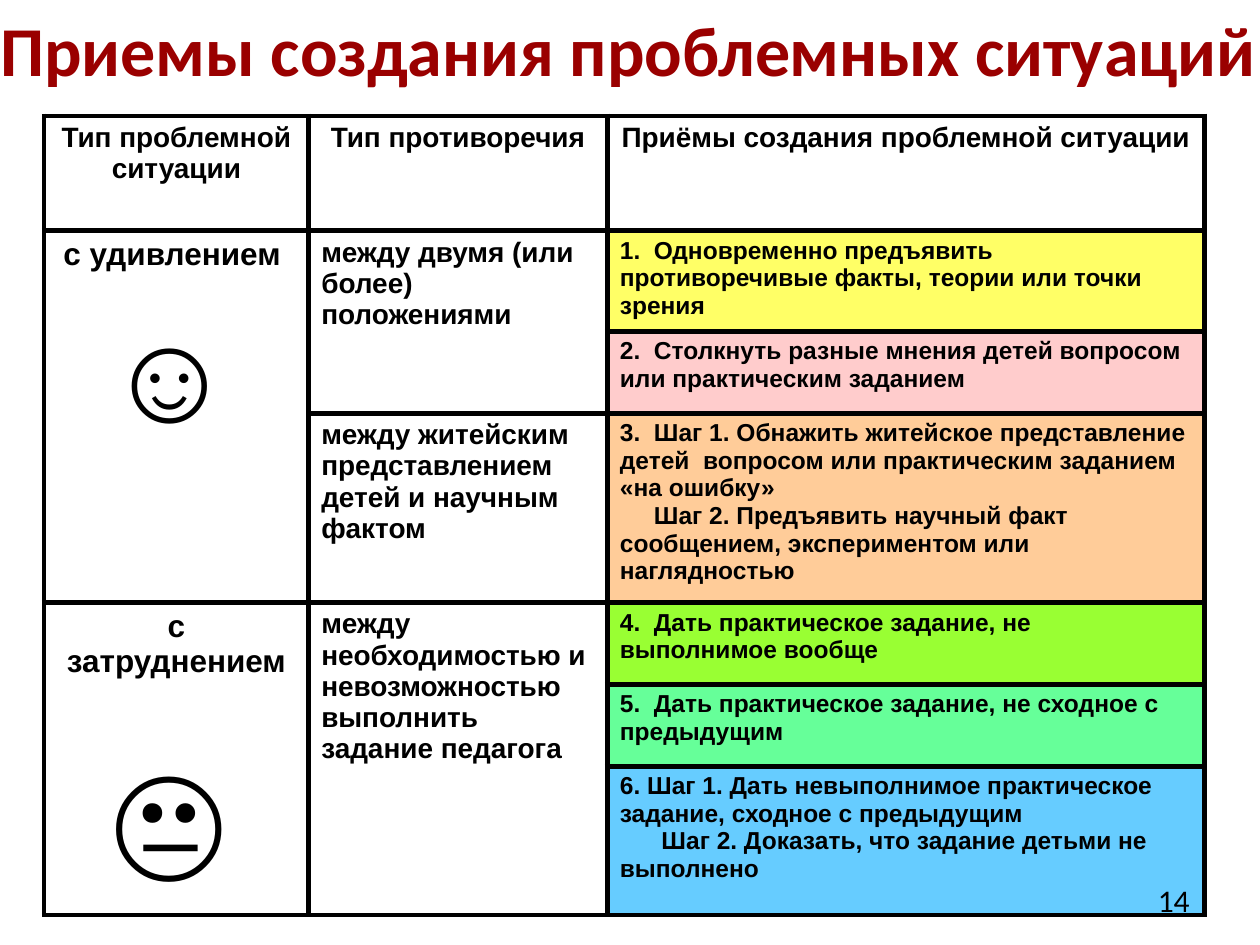
from dataclasses import dataclass

from lxml import etree
from pptx import Presentation
from pptx.dml.color import RGBColor
from pptx.enum import text
from pptx.oxml.ns import qn
from pptx.util import Emu, Inches, Pt

WIDTH, HEIGHT = Inches(10), Inches(7.5)
COLUMNS = (21, 23.7, 47.4)
ROWS = (12.13, 8.8, 8.67, 19.2, 8.67, 8.67, 15.73)
BLACK, DARK_RED = "000000", "9A0000"
CENTER, LEFT = text.PP_ALIGN.CENTER, text.PP_ALIGN.LEFT


@dataclass(frozen=True)
class Run:
    words: str
    size: float
    font: str = "Arial"
    color: str = BLACK
    bold: bool = True


@dataclass(frozen=True)
class Line:
    runs: tuple[Run, ...]
    align: text.PP_ALIGN = LEFT
    before: float = 0
    indent: float = 0


@dataclass(frozen=True)
class Entry:
    row: int
    column: int
    lines: tuple[Line, ...]
    row_span: int = 1
    fill: str | None = None


def header(column: int, words: str) -> Entry:
    """Describe a heading cell."""
    return Entry(0, column, (Line((Run(words, 16),), CENTER),))


def situation(row: int, words: str, face: str, gap: float) -> Entry:
    """Describe a situation type with its face symbol."""
    symbol = Line((Run(face, 72), Run(" ", 28, bold=False)), CENTER, gap)
    return Entry(row, 0, (Line((Run(words, 18),), CENTER), symbol), 3)


def contradiction(row: int, row_span: int, words: str) -> Entry:
    """Describe a contradiction cell."""
    return Entry(row, 1, (Line((Run(words, 16),)),), row_span)


def technique(row: int, fill: str, words: str, second: str = "", indent: float = 0) -> Entry:
    """Describe a coloured technique with an optional second step."""
    lines = [Line((Run(words, 14),))]
    if second:
        lines.append(Line((Run(second, 14),), indent=indent))
    return Entry(row, 2, tuple(lines), fill=fill)


ENTRIES = (
    header(0, "Тип проблемной ситуации"),
    header(1, "Тип противоречия"),
    header(2, "Приёмы создания проблемной ситуации"),
    situation(1, "с удивлением ", "☺", 21),
    situation(4, "с затруднением", "😐", 41),
    contradiction(1, 2, "между двумя (или более) положениями"),
    contradiction(3, 1, "между житейским представлением детей и научным фактом"),
    contradiction(4, 3, "между необходимостью и невозможностью выполнить задание педагога"),
    technique(1, "FFFF66", "1.  Одновременно предъявить противоречивые факты, теории или точки зрения"),
    technique(2, "FFCCCC", "2.  Столкнуть разные мнения детей вопросом или практическим заданием"),
    technique(3, "FFCC99", "3.  Шаг 1. Обнажить житейское представление детей  вопросом "
              "или практическим заданием «на ошибку»",
              "Шаг 2. Предъявить научный факт сообщением, экспериментом или наглядностью", 0.27),
    technique(4, "99FF33", "4.  Дать практическое задание, не выполнимое вообще"),
    technique(5, "66FF99", "5.  Дать практическое задание, не сходное с предыдущим"),
    technique(6, "66CCFF", "6. Шаг 1. Дать невыполнимое практическое задание, сходное с предыдущим",
              "Шаг 2. Доказать, что задание детьми не выполнено", 0.33),
)


def rgb(value: str) -> RGBColor:
    """Turn a hex string into a colour."""
    return RGBColor.from_string(value)


def across(percent: float) -> Emu:
    """Return a share of the slide's width."""
    return Emu(round(WIDTH * percent / 100))


def down(percent: float) -> Emu:
    """Return a share of the slide's height."""
    return Emu(round(HEIGHT * percent / 100))


def write(frame, lines: tuple[Line, ...]) -> None:
    """Fill a text frame run by run."""
    for index, line in enumerate(lines):
        paragraph = frame.add_paragraph() if index else frame.paragraphs[0]
        paragraph.alignment = line.align
        if line.before:
            paragraph.space_before = Pt(line.before)
        if line.indent:
            properties = paragraph._p.get_or_add_pPr()
            properties.set("marL", "0")
            properties.set("indent", str(Inches(line.indent)))
        for item in line.runs:
            run = paragraph.add_run()
            run.text = item.words
            run.font.size = Pt(item.size)
            run.font.name = item.font
            run.font.bold = item.bold
            run.font.color.rgb = rgb(item.color)


def add_label(slide, box: tuple[float, float, float, float], line: Line,
              anchor: text.MSO_ANCHOR) -> None:
    """Add a wrapped text box placed by shares of the slide."""
    left, top, width, height = box
    frame = slide.shapes.add_textbox(across(left), down(top), across(width), down(height)).text_frame
    frame.word_wrap = True
    frame.vertical_anchor = anchor
    write(frame, (line,))


def add_borders(cell, color: str, width: float) -> None:
    """Draw all four borders of a cell."""
    properties = cell._tc.get_or_add_tcPr()
    for side in ("lnL", "lnR", "lnT", "lnB"):
        border = etree.SubElement(properties, qn(f"a:{side}"), w=str(Pt(width)))
        fill = etree.SubElement(border, qn("a:solidFill"))
        etree.SubElement(fill, qn("a:srgbClr"), val=color)


def add_techniques(slide) -> None:
    """Add the table of situations, contradictions and techniques."""
    frame = slide.shapes.add_table(len(ROWS), len(COLUMNS), across(3.5), down(12.27),
                                   across(sum(COLUMNS)), down(sum(ROWS)))
    table = frame.table
    table.first_row = table.horz_banding = False
    for column, share in zip(table.columns, COLUMNS):
        column.width = across(share)
    for row, share in zip(table.rows, ROWS):
        row.height = down(share)
    for cell in table.iter_cells():
        add_borders(cell, BLACK, 3)
        cell.fill.background()
    for entry in ENTRIES:
        cell = table.cell(entry.row, entry.column)
        if entry.row_span > 1:
            cell.merge(table.cell(entry.row + entry.row_span - 1, entry.column))
        if entry.fill:
            cell.fill.solid()
            cell.fill.fore_color.rgb = rgb(entry.fill)
        write(cell.text_frame, entry.lines)


def main() -> None:
    """Build and save the slide."""
    presentation = Presentation()
    presentation.slide_width, presentation.slide_height = WIDTH, HEIGHT
    slide = presentation.slides.add_slide(presentation.slide_layouts[6])
    title = Run("Приемы создания проблемных ситуаций", 40, "Calibri", DARK_RED)
    add_label(slide, (-4.3, 0, 108.3, 16.53), Line((title,), CENTER), text.MSO_ANCHOR.TOP)
    add_techniques(slide)
    number = Run("14", 18, "Calibri", bold=False)
    add_label(slide, (90.9, 92.67, 7.1, 5.2), Line((number,)), text.MSO_ANCHOR.MIDDLE)
    presentation.save("out.pptx")


if __name__ == "__main__":
    main()
